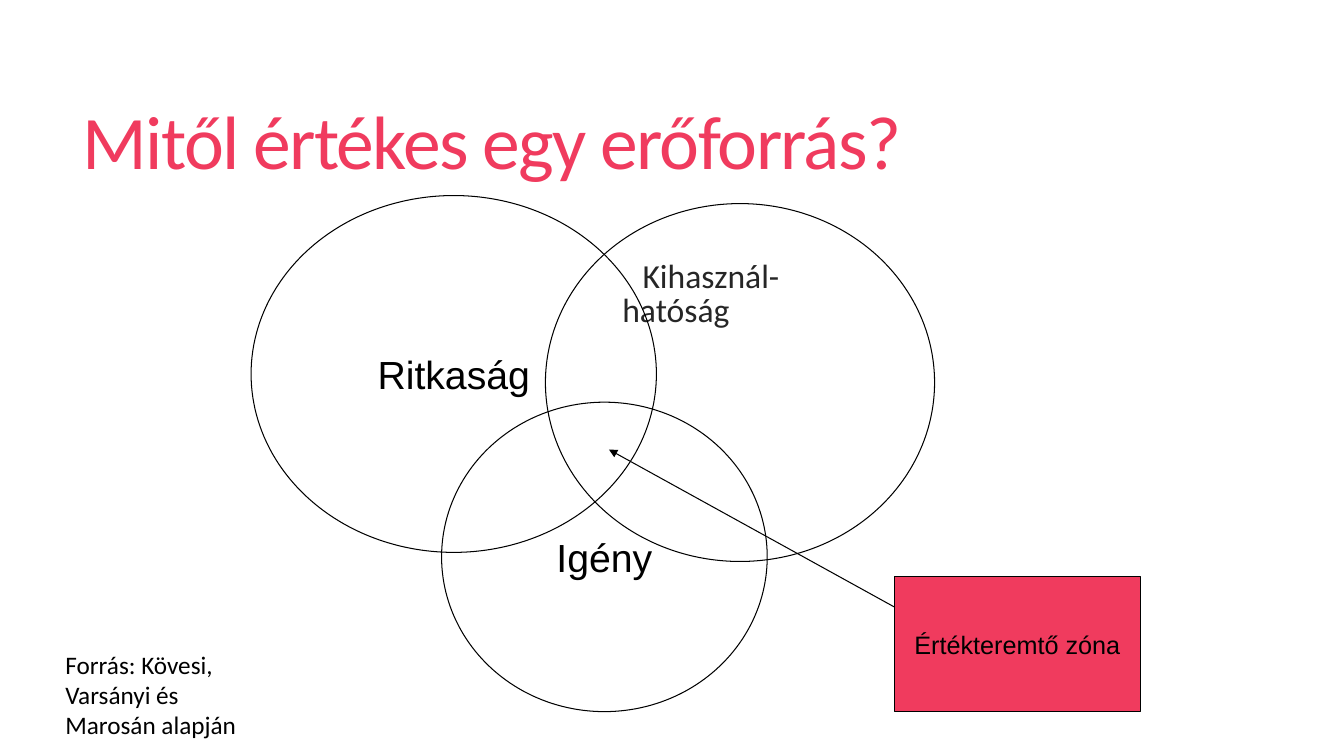
"""Builds a slide with a three-circle diagram of what makes a resource valuable."""
from lxml import etree
from pptx import Presentation
from pptx.dml.color import RGBColor
from pptx.enum.shapes import MSO_CONNECTOR, MSO_SHAPE
from pptx.enum.text import MSO_ANCHOR, MSO_AUTO_SIZE, PP_ALIGN
from pptx.oxml.ns import qn
from pptx.util import Pt

PX = 9144
PINK = RGBColor(0xF0, 0x3B, 0x5E)
BLACK = RGBColor(0, 0, 0)
GREY = RGBColor(0x26, 0x26, 0x26)
OVAL, RECT = MSO_SHAPE.OVAL, MSO_SHAPE.RECTANGLE
STRAIGHT = MSO_CONNECTOR.STRAIGHT
TOP, MIDDLE = MSO_ANCHOR.TOP, MSO_ANCHOR.MIDDLE
LEFT, CENTER = PP_ALIGN.LEFT, PP_ALIGN.CENTER
GROW = MSO_AUTO_SIZE.SHAPE_TO_FIT_TEXT


def px(*lengths):
    """Turn px lengths into EMU."""
    return [n * PX for n in lengths]


def write(sp, text, size, font, color, align=LEFT, anchor=TOP, wrap=True):
    """Write one run into a shape and return its paragraph."""
    tf = sp.text_frame
    tf.word_wrap = wrap
    tf.vertical_anchor = anchor
    p = tf.paragraphs[0]
    p.alignment = align
    r = p.add_run()
    r.text = text
    r.font.size = Pt(size)
    r.font.name = font
    r.font.color.rgb = color
    return p


def add_outlined(s, kind, box, fill=None):
    """Add a preset shape with a thin black outline."""
    sp = s.shapes.add_shape(kind, *px(*box))
    sp.shadow.inherit = False
    if fill is None:
        sp.fill.background()
    else:
        sp.fill.solid()
        sp.fill.fore_color.rgb = fill
    sp.line.color.rgb = BLACK
    sp.line.width = Pt(0.75)
    return sp


def add_centred(s, kind, box, text, size, fill=None):
    """Add an outlined shape with a centred label."""
    sp = add_outlined(s, kind, box, fill)
    write(sp, text, size, "Arial", BLACK, CENTER, MIDDLE, False)


def add_arrow(s, *ends):
    """Add a thin black arrow."""
    line = s.shapes.add_connector(STRAIGHT, *px(*ends))
    line.line.color.rgb = BLACK
    line.line.width = Pt(0.75)
    etree.SubElement(line.line._get_or_add_ln(), qn("a:tailEnd"), type="triangle")
    etree.SubElement(line._element.spPr, qn("a:effectLst"))


def add_title(s, text):
    """Add the tightly spaced slide title."""
    sp = s.shapes.add_textbox(*px(72, 55, 1178, 181))
    p = write(sp, text, 54, "Calibri", PINK, anchor=MIDDLE)
    p.line_spacing = 0.85
    p.runs[0].font._element.set("spc", "-120")


def add_usability(s):
    """Add the right circle with its indented label."""
    sp = add_outlined(s, OVAL, (541, 202, 386, 355))
    p = write(sp, "Kihasznál- hatóság", 24, "Calibri", GREY)
    p.line_spacing = 0.85
    pPr = p._p.get_or_add_pPr()
    pPr.set("marL", str(10 * PX))
    pPr.set("indent", str(20 * PX))


def add_source(s, text):
    """Add the source note."""
    sp = s.shapes.add_textbox(*px(55, 639, 192, 101))
    write(sp, text, 18, "Calibri", BLACK)
    sp.text_frame.auto_size = GROW


def main():
    """Build and save the slide."""
    prs = Presentation()
    prs.slide_width, prs.slide_height = px(1333, 750)
    s = prs.slides.add_slide(prs.slide_layouts[6])
    add_title(s, "Mitől értékes egy erőforrás?")
    add_usability(s)
    add_centred(s, OVAL, (249, 194, 402, 354), "Ritkaság", 28)
    add_centred(s, OVAL, (438, 399, 323, 307), "Igény", 28)
    add_arrow(s, 903, 611, 604, 446)
    add_centred(s, RECT, (887, 572, 244, 134), "Értékteremtő zóna", 18, PINK)
    add_source(s, "Forrás: Kövesi, Varsányi és Marosán alapján")
    prs.save("out.pptx")


if __name__ == "__main__":
    main()
